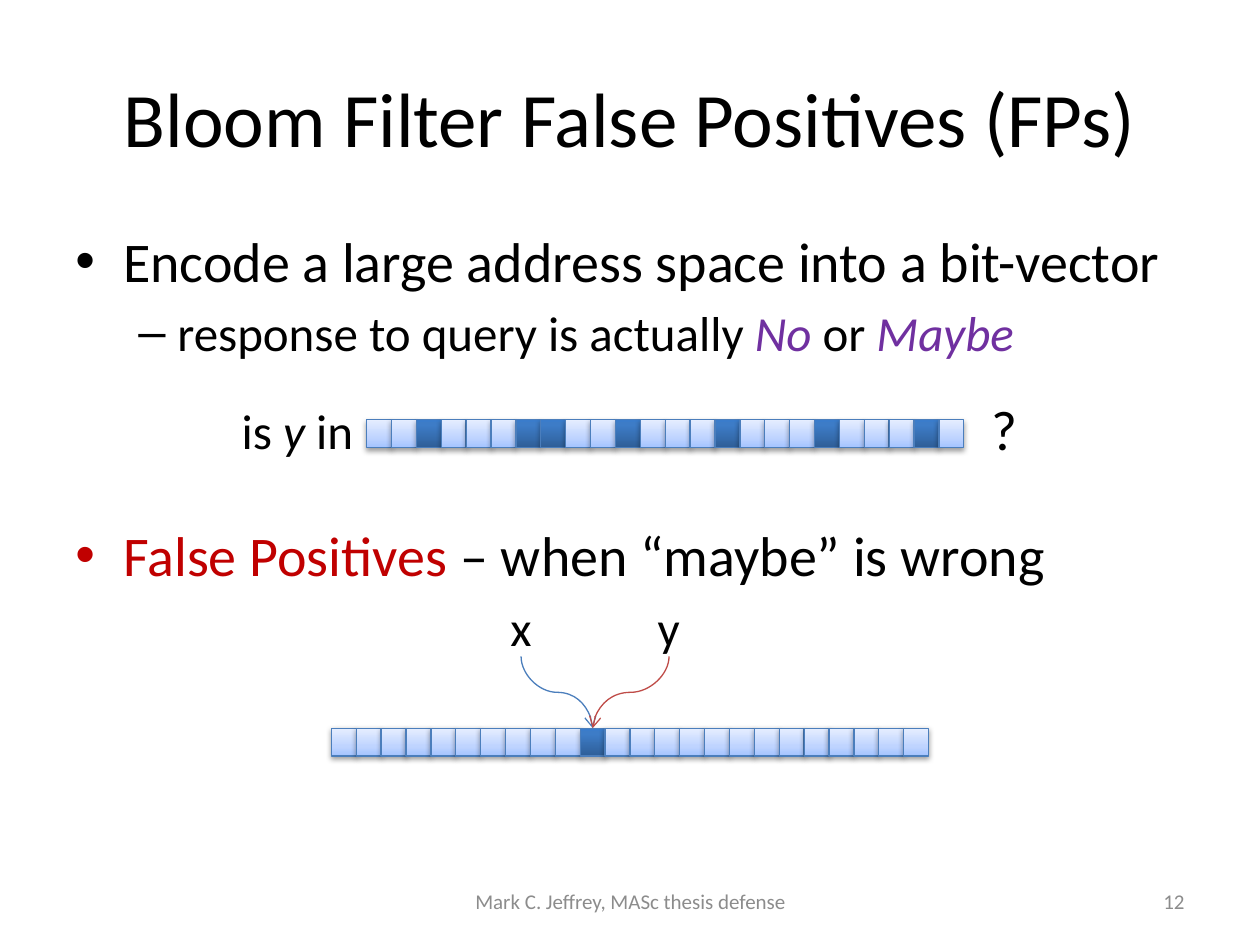
from dataclasses import dataclass

from lxml import etree
from pptx import Presentation
from pptx.dml.color import RGBColor
from pptx.enum.shapes import MSO_CONNECTOR, MSO_SHAPE
from pptx.enum.text import MSO_ANCHOR, PP_ALIGN
from pptx.oxml.ns import qn
from pptx.util import Inches, Pt

RECT, CURVE = MSO_SHAPE.RECTANGLE, MSO_CONNECTOR.CURVE
TOP, MIDDLE = MSO_ANCHOR.TOP, MSO_ANCHOR.MIDDLE
LEFT, CENTER, RIGHT = PP_ALIGN.LEFT, PP_ALIGN.CENTER, PP_ALIGN.RIGHT

COLS, ROWS = 100, 75
BITS = 24
BIT_W, BIT_H = 1.975, 2.2


@dataclass(frozen=True)
class Theme:
    font: str = "Calibri"
    ink: str = "000000"
    muted: str = "8C8C8C"
    answer: str = "7030A0"
    alert: str = "C00000"
    blue: str = "4B7EBC"
    red: str = "BF4C48"
    clear_bit: tuple = ((0, "A4C4FF"), (35, "BFD4FF"), (100, "E6EEFF"))
    set_bit: tuple = ((0, "2F5F99"), (80, "3D7CC7"), (100, "3A7CCB"))
    title: int = 44
    body: int = 32
    sub: int = 28
    footer: int = 12
    line: float = 0.75


def add_node(parent, tag, **attrs):
    return etree.SubElement(parent, qn(tag), {k: str(v) for k, v in attrs.items()})


class Deck:
    """Draws on the current slide; lengths are columns and rows of the grid."""

    def __init__(self, theme):
        self.theme = theme
        self.prs = Presentation()
        self.prs.slide_width, self.prs.slide_height = Inches(10), Inches(7.5)
        self.slide = self.prs.slides.add_slide(self.prs.slide_layouts[6])
        self.shapes = self.slide.shapes

    def start_group(self):
        """Send the shapes that follow into a new group."""
        self.shapes = self.slide.shapes.add_group_shape().shapes

    def x(self, cols):
        return round(self.prs.slide_width * cols / COLS)

    def y(self, rows):
        return round(self.prs.slide_height * rows / ROWS)

    def box(self, col, row, width, height):
        return self.x(col), self.y(row), self.x(width), self.y(height)

    def runs(self, p, parts, size, color):
        """Fill a paragraph with (text, colour or None, italic) parts."""
        for text, own_color, italic in parts:
            r = p.add_run()
            r.text = text
            r.font.name, r.font.size, r.font.italic = self.theme.font, Pt(size), italic
            r.font.color.rgb = RGBColor.from_string(own_color or color)

    def text(self, area, parts, size, color=None, align=LEFT, anchor=TOP,
             wrap=False, inset=True):
        tf = self.shapes.add_textbox(*self.box(*area)).text_frame
        tf.word_wrap, tf.vertical_anchor = wrap, anchor
        if not inset:
            tf.margin_left = tf.margin_right = tf.margin_top = tf.margin_bottom = 0
        p = tf.paragraphs[0]
        p.alignment = align
        self.runs(p, parts, size, color or self.theme.ink)

    def bullets(self, area, items):
        """Write (level, space before, parts) items as a bulleted list."""
        tf = self.shapes.add_textbox(*self.box(*area)).text_frame
        tf.word_wrap = True
        styles = (("•", 0.38, 0.38, self.theme.body), ("–", 0.81, 0.31, self.theme.sub))
        for i, (level, before, parts) in enumerate(items):
            p = tf.add_paragraph() if i else tf.paragraphs[0]
            mark, margin, hang, size = styles[level]
            p.level, p.space_before = level, Pt(before)
            pPr = p._p.get_or_add_pPr()
            pPr.set("marL", str(Inches(margin)))
            pPr.set("indent", str(-Inches(hang)))
            add_node(pPr, "a:buFont", typeface="Arial")
            add_node(pPr, "a:buChar", char=mark)
            self.runs(p, parts, size, self.theme.ink)

    def bit(self, col, row, is_set):
        sp = self.shapes.add_shape(RECT, *self.box(col, row, BIT_W, BIT_H))
        sp.fill.gradient()
        sp.fill.gradient_angle = 90
        stops = sp._element.spPr.find(".//" + qn("a:gsLst"))
        stops.clear()
        for pos, color in self.theme.set_bit if is_set else self.theme.clear_bit:
            stop = add_node(stops, "a:gs", pos=pos * 1000)
            add_node(stop, "a:srgbClr", val=color)
        sp.line.color.rgb = RGBColor.from_string(self.theme.blue)
        sp.line.width = Pt(self.theme.line)
        sp.shadow.inherit = False
        opacity, dist = (35, 1.8) if is_set else (38, 1.6)
        shadow = add_node(sp._element.spPr.find(qn("a:effectLst")), "a:outerShdw",
                          blurRad=Pt(3.1), dist=Pt(dist), dir=90 * 60000, rotWithShape=0)
        color = add_node(shadow, "a:srgbClr", val="000000")
        add_node(color, "a:alpha", val=opacity * 1000)

    def bit_vector(self, col, row, set_bits):
        for i in range(BITS):
            self.bit(col + i * BIT_W, row, i in set_bits)

    def drop_curve(self, start, end, color):
        """Curved arrow that leaves and arrives vertically."""
        (x1, y1), (x2, y2) = [(self.x(c), self.y(r)) for c, r in (start, end)]
        length, spread = y2 - y1, abs(x2 - x1)
        left, top = (x1 + x2 - length) // 2, (y1 + y2 - spread) // 2
        cxn = self.shapes.add_connector(CURVE, left, top, left + length, top + spread)
        spPr = cxn._element.spPr
        xfrm = spPr.find(qn("a:xfrm"))
        goes_right = x2 > x1
        xfrm.set("rot", str((270 if goes_right else 90) * 60000))
        if goes_right:
            xfrm.set("flipH", "1")
        cxn.line.color.rgb = RGBColor.from_string(color)
        cxn.line.width = Pt(self.theme.line)
        add_node(cxn.line._get_or_add_ln(), "a:tailEnd", type="arrow")
        add_node(spPr, "a:effectLst")


def plain(text):
    return [(text, None, False)]


def main():
    theme = Theme()
    deck = Deck(theme)
    deck.text((5, 3, 90, 12.5), plain("Bloom Filter False Positives (FPs)"),
              theme.title, align=CENTER, anchor=MIDDLE, wrap=True)
    deck.bullets((5, 17.5, 90, 49.5), [
        (0, 0, plain("Encode a large address space into a bit-vector")),
        (1, 5, [("response to query is actually ", None, False),
                ("No", theme.answer, True), (" or ", None, False),
                ("Maybe", theme.answer, True)]),
        (0, 91, [("False Positives ", theme.alert, False),
                 ("– when “maybe” is wrong", None, False)]),
    ])
    for area, text, align in (
            ((34.2, 69.5, 31.7, 4), "Mark C. Jeffrey, MASc thesis defense", CENTER),
            ((71.7, 69.5, 23.3, 4), "12", RIGHT)):
        deck.text(area, plain(text), theme.footer, theme.muted, align, MIDDLE, wrap=True)

    deck.start_group()
    deck.bit_vector(29.1, 33.3, {2, 6, 7, 10, 14, 18, 22})
    deck.text((18.2, 31.3, 11, 5.7),
              [("is ", None, False), ("y ", None, True), ("in", None, False)], theme.sub)
    deck.text((77.7, 30.8, 4.1, 6.4), plain("?"), theme.body)

    deck.start_group()
    vector_col, vector_row, shared_bit = 26.3, 57.8, 10
    deck.bit_vector(vector_col, vector_row, {shared_bit})
    target = vector_col + (shared_bit + 0.5) * BIT_W, vector_row
    for key, col, width, color in (("x", 40.5, 1.7, theme.blue),
                                   ("y", 52.2, 1.8, theme.red)):
        deck.text((col, 47.4, width, 4.7), plain(key), theme.sub, inset=False)
        deck.drop_curve((col + width / 2, 52.1), target, color)

    deck.prs.save("out.pptx")


if __name__ == "__main__":
    main()
